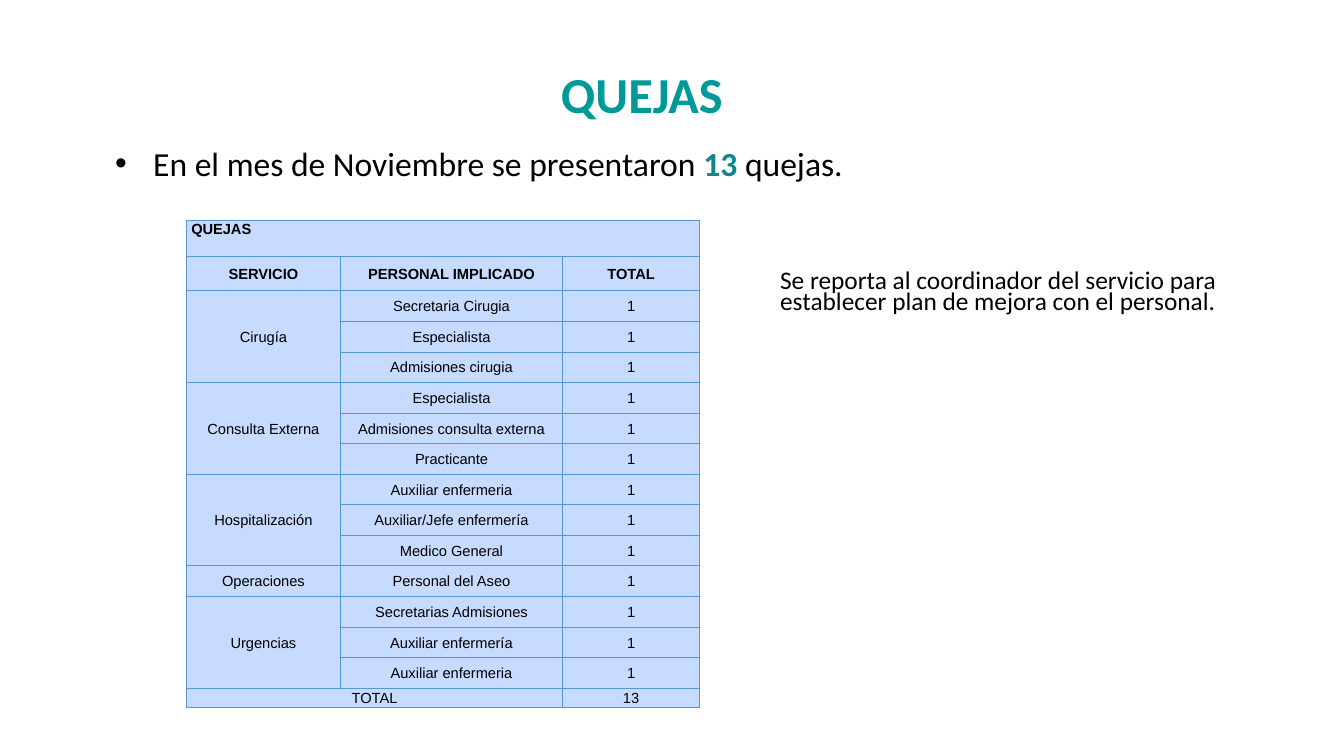
from dataclasses import dataclass

from lxml import etree
from pptx import Presentation
from pptx.dml.color import RGBColor
from pptx.enum import text as t
from pptx.oxml import ns
from pptx.util import Cm, Pt

BLACK, TITLE, COUNT = "000000", "009999", "0E868C"
FILL, EDGE = "C6DBFF", "5698D3"
MID, TOP = t.MSO_ANCHOR.MIDDLE, t.MSO_ANCHOR.TOP
LEFT, CENTER, JUSTIFY = t.PP_ALIGN.LEFT, t.PP_ALIGN.CENTER, t.PP_ALIGN.JUSTIFY


@dataclass
class Box:
    left: float
    top: float
    width: float
    height: float

    def emu(self) -> list:
        return [Cm(n) for n in (self.left, self.top, self.width, self.height)]


@dataclass
class Group:
    """A service and the staff named in its complaints, one each."""
    name: str
    staff: list


GROUPS = [
    Group("Cirugía", ["Secretaria Cirugia", "Especialista", "Admisiones cirugia"]),
    Group("Consulta Externa",
          ["Especialista", "Admisiones consulta externa", "Practicante"]),
    Group("Hospitalización",
          ["Auxiliar enfermeria", "Auxiliar/Jefe enfermería", "Medico General"]),
    Group("Operaciones", ["Personal del Aseo"]),
    Group("Urgencias",
          ["Secretarias Admisiones", "Auxiliar enfermería", "Auxiliar enfermeria"]),
]
COUNT_ALL = sum(len(g.staff) for g in GROUPS)
COLS = [3.88, 5.6, 3.45]
ROWS = [0.91, 0.87] + [0.77] * COUNT_ALL + [0.43]


def color(code: str) -> RGBColor:
    return RGBColor.from_string(code)


def style(font, size: float, code: str = BLACK, bold: bool = False,
          name: str = "Calibri") -> None:
    font.name, font.size, font.bold = name, Pt(size), bold
    font.color.rgb = color(code)


def add_text(slide, box: Box, space: float):
    """Add a wrapped text box and return its first paragraph."""
    frame = slide.shapes.add_textbox(*box.emu()).text_frame
    frame.word_wrap = True
    par = frame.paragraphs[0]
    par.line_spacing = space
    return par


def add_bullet(par) -> None:
    props = par._p.get_or_add_pPr()
    props.set("marL", str(Cm(1.27)))
    props.set("indent", str(Cm(-0.96)))
    tint = etree.SubElement(props, ns.qn("a:buClr"))
    etree.SubElement(tint, ns.qn("a:srgbClr"), val=BLACK)
    etree.SubElement(props, ns.qn("a:buFont"), typeface="Arial")
    etree.SubElement(props, ns.qn("a:buChar"), char="•")


def add_edges(cell) -> None:
    props = cell._tc.get_or_add_tcPr()
    for side in ("lnL", "lnR", "lnT", "lnB"):
        line = etree.SubElement(props, ns.qn(f"a:{side}"), w=str(Pt(0.75)))
        fill = etree.SubElement(line, ns.qn("a:solidFill"))
        etree.SubElement(fill, ns.qn("a:srgbClr"), val=EDGE)


def format_cell(cell, bold: bool, first: bool) -> None:
    add_edges(cell)
    cell.fill.solid()
    cell.fill.fore_color.rgb = color(FILL)
    cell.margin_left = Cm(0.12 if first else 0.03)
    cell.margin_right = cell.margin_top = Cm(0.03)
    cell.margin_bottom = 0
    cell.vertical_anchor = TOP if first else MID
    par = cell.text_frame.paragraphs[0]
    par.alignment = LEFT if first else CENTER
    style(par.font, 10.5, bold=bold, name="Arial")


def add_grid(slide) -> None:
    box = Box(4.7, 5.55, sum(COLS), sum(ROWS))
    grid = slide.shapes.add_table(len(ROWS), len(COLS), *box.emu()).table
    for col, width in zip(grid.columns, COLS):
        col.width = Cm(width)
    for row, height in zip(grid.rows, ROWS):
        row.height = Cm(height)

    lines = [["QUEJAS", "", ""], ["SERVICIO", "PERSONAL IMPLICADO", "TOTAL"]]
    for group in GROUPS:
        start = len(lines)
        lines += [["" if i else group.name, who, "1"]
                  for i, who in enumerate(group.staff)]
        if len(group.staff) > 1:
            grid.cell(start, 0).merge(grid.cell(len(lines) - 1, 0))
    lines.append(["TOTAL", "", str(COUNT_ALL)])
    last = len(lines) - 1
    grid.cell(0, 0).merge(grid.cell(0, 2))
    grid.cell(last, 0).merge(grid.cell(last, 1))

    for r, line in enumerate(lines):
        for c, words in enumerate(line):
            cell = grid.cell(r, c)
            cell.text = words
            format_cell(cell, bold=r < 2, first=r == 0)


def add_title(slide) -> None:
    title = slide.shapes.title
    title.left, title.top, title.width, title.height = Box(
        2.74, 1.32, 26.87, 2.26).emu()
    title.text_frame.text = "QUEJAS"
    title.text_frame.vertical_anchor = MID
    par = title.text_frame.paragraphs[0]
    par.alignment, par.line_spacing = CENTER, 0.9
    style(par.font, 36, TITLE, True)


def add_intro(slide) -> None:
    par = add_text(slide, Box(2.34, 3.58, 29.21, 12.85), 0.9)
    par.alignment = JUSTIFY
    add_bullet(par)
    for words, code, bold in [
        ("En el mes de Noviembre se presentaron ", BLACK, False),
        (f"{COUNT_ALL} ", COUNT, True),
        ("quejas.", BLACK, False),
    ]:
        run = par.add_run()
        run.text = words
        style(run.font, 24, code, bold)


def add_note(slide) -> None:
    par = add_text(slide, Box(19.41, 6.73, 12.95, 1.98), 0.7)
    par.text = ("Se reporta al coordinador del servicio para establecer "
                "plan de mejora con el personal.")
    style(par.font, 18.1)


def main() -> None:
    deck = Presentation()
    deck.slide_width, deck.slide_height = Cm(33.87), Cm(19.05)
    slide = deck.slides.add_slide(deck.slide_layouts[5])
    add_title(slide)
    add_intro(slide)
    add_note(slide)
    add_grid(slide)
    deck.save("out.pptx")


if __name__ == "__main__":
    main()
